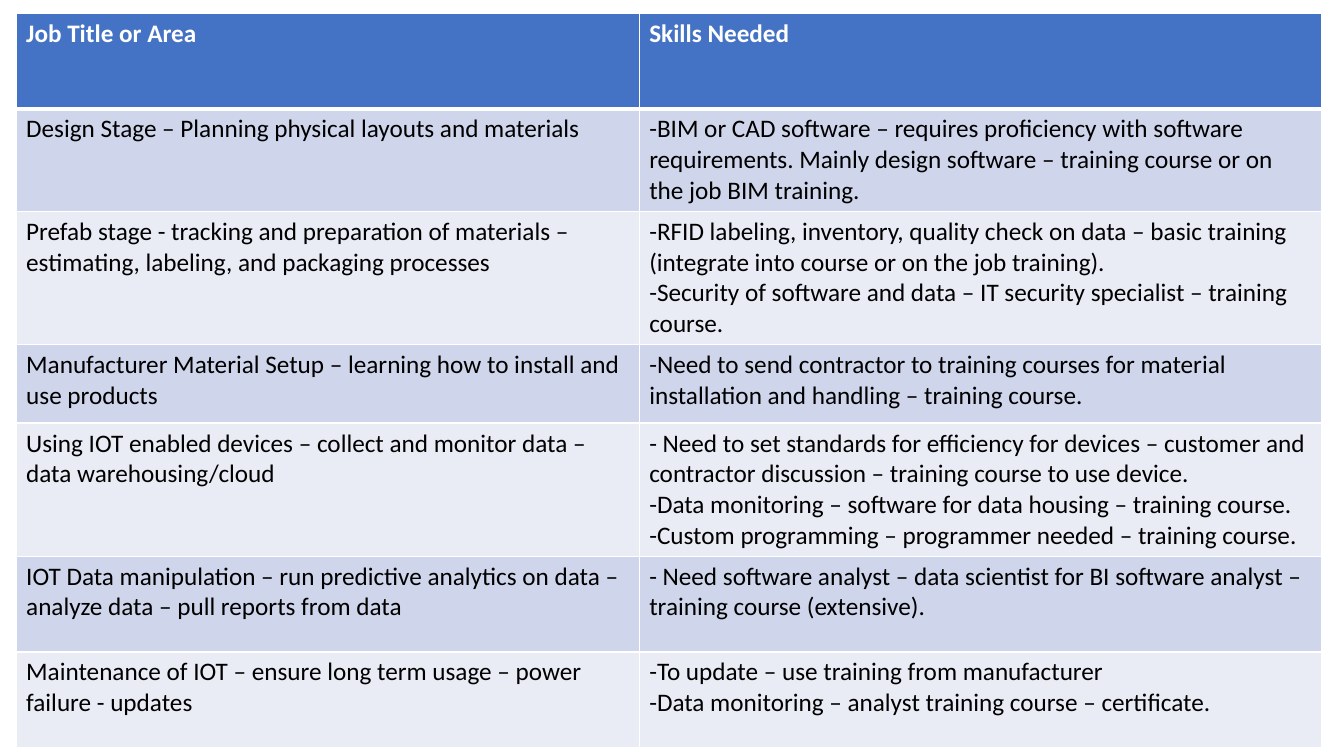
"""Build a slide with a table of construction job areas and the skills they need."""
from dataclasses import dataclass

from lxml.etree import SubElement
from pptx import Presentation
from pptx.dml.color import RGBColor
from pptx.oxml.ns import qn
from pptx.table import _Cell
from pptx.util import Inches, Pt

WHITE = RGBColor(0xFF, 0xFF, 0xFF)
BLACK = RGBColor(0x00, 0x00, 0x00)
HEADER_BLUE = RGBColor(0x44, 0x72, 0xC4)
BAND_DARK = RGBColor(0xCF, 0xD5, 0xEA)
BAND_LIGHT = RGBColor(0xE9, 0xEB, 0xF5)

COLUMN_WIDTHS = (6.18, 6.77)
HEADER_FORMAT = {"name": "Calibri", "size": Pt(18), "bold": True}
BODY_FORMAT = {**HEADER_FORMAT, "bold": False}


@dataclass(frozen=True)
class JobArea:
    title: str
    skills: tuple[str, ...]
    height: float


JOB_AREAS = (
    JobArea("Job Title or Area", ("Skills Needed",), 0.95),
    JobArea(
        "Design Stage – Planning physical layouts and materials",
        ("-BIM or CAD software – requires proficiency with software requirements. "
         "Mainly design software – training course or on the job BIM training.",),
        0.95,
    ),
    JobArea(
        "Prefab stage - tracking and preparation of materials – "
        "estimating, labeling, and packaging processes",
        ("-RFID labeling, inventory, quality check on data – basic training "
         "(integrate into course or on the job training).",
         "-Security of software and data – IT security specialist – training course."),
        1.24,
    ),
    JobArea(
        "Manufacturer Material Setup – learning how to install and use products",
        ("-Need to send contractor to training courses for material installation "
         "and handling – training course.",),
        0.78,
    ),
    JobArea(
        "Using IOT enabled devices – collect and monitor data – data warehousing/cloud",
        ("- Need to set standards for efficiency for devices – customer and contractor "
         "discussion – training course to use device.",
         "-Data monitoring – software for data housing – training course.",
         "-Custom programming – programmer needed – training course."),
        1.24,
    ),
    JobArea(
        "IOT Data manipulation – run predictive analytics on data – "
        "analyze data – pull reports from data",
        ("- Need software analyst – data scientist for BI software analyst –"
         "training course (extensive).",),
        0.95,
    ),
    JobArea(
        "Maintenance of IOT – ensure long term usage – power failure - updates",
        ("-To update – use training from manufacturer",
         "-Data monitoring – analyst training course – certificate."),
        0.95,
    ),
)


def draw_borders(cell: _Cell, top: float, bottom: float) -> None:
    """Give the cell white borders of the stated widths in points."""
    properties = cell._tc.get_or_add_tcPr()
    widths = {"a:lnL": 1, "a:lnR": 1, "a:lnT": top, "a:lnB": bottom}
    for side, width in widths.items():
        border = SubElement(properties, qn(side), w=str(Pt(width)))
        border_fill = SubElement(border, qn("a:solidFill"))
        SubElement(border_fill, qn("a:srgbClr"), val=str(WHITE))


def fill_cell(cell: _Cell, lines: tuple[str, ...], row: int) -> None:
    """Write the lines into the cell and style it for its row."""
    is_header = row == 0
    draw_borders(cell, top=3 if row == 1 else 1, bottom=3 if is_header else 1)
    band = BAND_DARK if row % 2 else BAND_LIGHT
    cell.fill.solid()
    cell.fill.fore_color.rgb = HEADER_BLUE if is_header else band
    cell.text = "\n".join(lines)
    for paragraph in cell.text_frame.paragraphs:
        for run in paragraph.runs:
            for attribute, value in (HEADER_FORMAT if is_header else BODY_FORMAT).items():
                setattr(run.font, attribute, value)
            run.font.color.rgb = WHITE if is_header else BLACK


def main() -> None:
    """Create the presentation and save it."""
    presentation = Presentation()
    presentation.slide_width = Inches(13.33)
    presentation.slide_height = Inches(7.5)
    slide = presentation.slides.add_slide(presentation.slide_layouts[6])

    skills_table = slide.shapes.add_table(
        len(JOB_AREAS), len(COLUMN_WIDTHS), Inches(0.16), Inches(0.13),
        Inches(sum(COLUMN_WIDTHS)), Inches(sum(area.height for area in JOB_AREAS)),
    ).table
    for column, width in zip(skills_table.columns, COLUMN_WIDTHS):
        column.width = Inches(width)
    for row, area in enumerate(JOB_AREAS):
        skills_table.rows[row].height = Inches(area.height)
        for column, lines in enumerate(((area.title,), area.skills)):
            fill_cell(skills_table.cell(row, column), lines, row)

    presentation.save("out.pptx")


if __name__ == "__main__":
    main()
